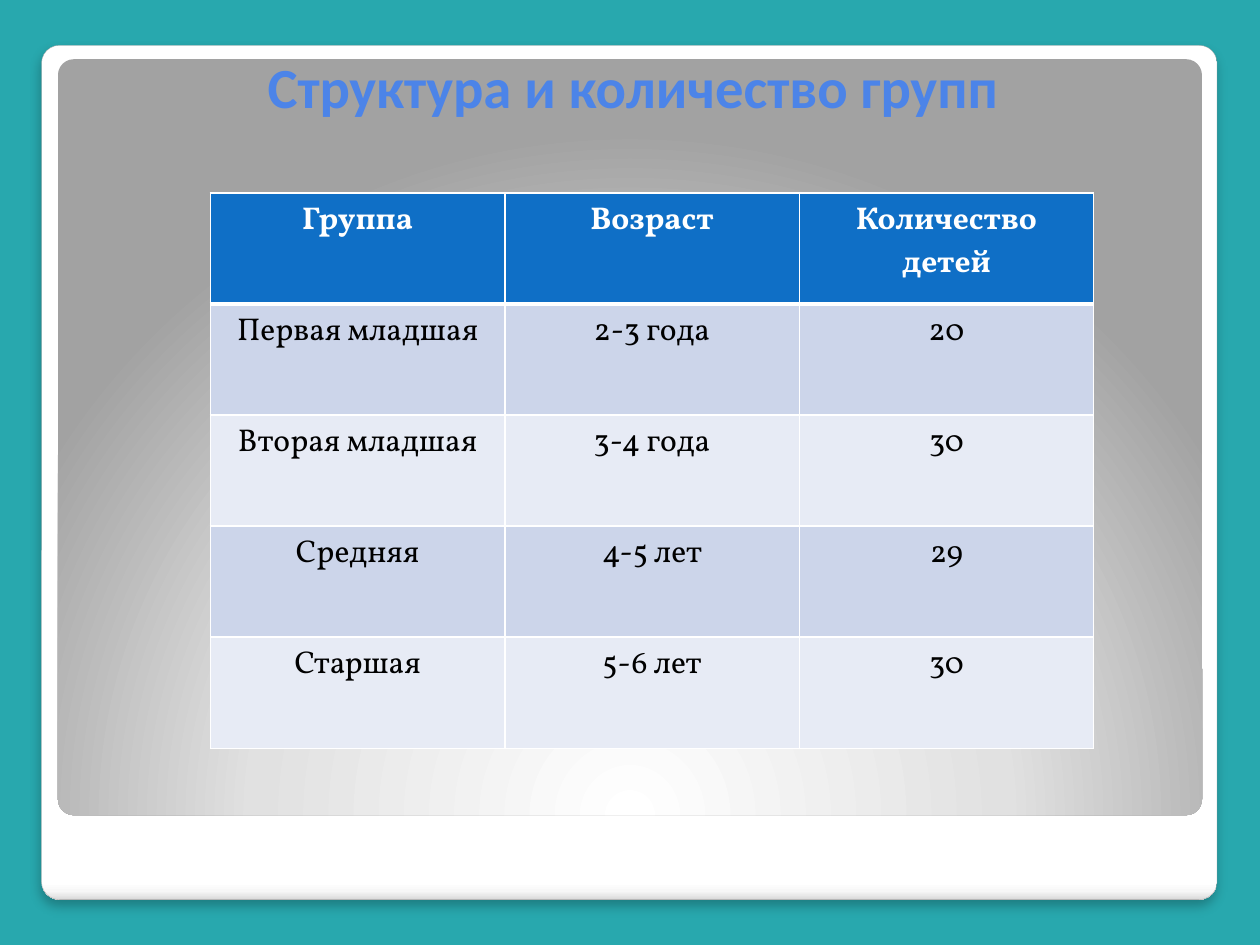
from lxml import etree
from pptx import Presentation
from pptx.dml.color import RGBColor
from pptx.enum.shapes import MSO_SHAPE
from pptx.enum.text import MSO_ANCHOR, PP_ALIGN
from pptx.oxml import parse_xml
from pptx.oxml.ns import nsdecls, qn
from pptx.util import Inches, Pt

GROUPS = [
    ("Группа", "Возраст", "Количество детей"),
    ("Первая младшая", "2-3 года", "20"),
    ("Вторая младшая", "3-4 года", "30"),
    ("Средняя", "4-5 лет", "29"),
    ("Старшая", "5-6 лет", "30"),
]
HEADER_FILL = "0F6FC6"
BAND_FILLS = ("E7EBF5", "CCD5EA")


def color(value):
    return RGBColor.from_string(value)


def set_gradient(shape, stops, direction):
    """Fill a shape with (percent, colour) stops; direction is a lin or path element."""
    shape.fill.background()
    stop_xml = "".join(
        f'<a:gs pos="{percent * 1000}"><a:srgbClr val="{value}"/></a:gs>'
        for percent, value in stops
    )
    gradient = parse_xml(
        f'<a:gradFill {nsdecls("a")} rotWithShape="1">'
        f"<a:gsLst>{stop_xml}</a:gsLst>{direction}</a:gradFill>"
    )
    properties = shape.element.spPr
    properties.replace(properties.find(qn("a:noFill")), gradient)


def add_panel(slide, left, top, width, height, stops, direction):
    panel = slide.shapes.add_shape(
        MSO_SHAPE.ROUNDED_RECTANGLE,
        Inches(left), Inches(top), Inches(width), Inches(height),
    )
    panel.adjustments[0] = 0.021
    panel.shadow.inherit = False
    panel.line.fill.background()
    set_gradient(panel, stops, direction)
    return panel


def add_frame(slide):
    # White card with a soft shadow
    card = add_panel(
        slide, 0.33, 0.36, 9.33, 6.78,
        [(0, "FFFFFF"), (98, "FFFFFF"), (99, "F7F7F7"), (100, "DADADA")],
        '<a:lin ang="5400000" scaled="0"/>',
    )
    card.line.color.rgb = color("A4A4A4")
    card.line.width = Pt(0.16)
    shadow = parse_xml(
        f'<a:outerShdw {nsdecls("a")} blurRad="{Pt(6)}" dist="{Pt(4)}" dir="5400000">'
        '<a:srgbClr val="000000"><a:alpha val="25000"/></a:srgbClr></a:outerShdw>'
    )
    card.element.spPr.find(qn("a:effectLst")).append(shadow)

    # Grey panel lit from below
    add_panel(
        slide, 0.46, 0.47, 9.08, 6,
        [(0, "FFFFFF"), (55, "E1E1E1"), (100, "A2A2A2")],
        '<a:path path="circle">'
        '<a:fillToRect l="50000" t="175000" r="50000" b="-75000"/></a:path>',
    )


def format_title(slide, left, top, width, height):
    title = slide.shapes.title
    title.left, title.top = Inches(left), Inches(top)
    title.width, title.height = Inches(width), Inches(height)
    title.element.getparent().append(title.element)  # in front of the panels
    frame = title.text_frame
    frame.text = "Структура и количество групп"
    frame.vertical_anchor = MSO_ANCHOR.TOP
    frame.margin_top = Inches(0.41)
    paragraph = frame.paragraphs[0]
    paragraph.alignment = PP_ALIGN.CENTER
    paragraph.font.name = "Calibri"
    paragraph.font.size = Pt(32.4)
    paragraph.font.bold = True
    paragraph.font.color.rgb = color("4C84E8")


def set_borders(cell, widths):
    """Give a cell white borders; widths are points for left, right, top, bottom."""
    properties = cell._tc.get_or_add_tcPr()
    for index, (side, width) in enumerate(zip("LRTB", widths)):
        border = etree.Element(qn(f"a:ln{side}"), w=str(Pt(width)))
        fill = etree.SubElement(border, qn("a:solidFill"))
        etree.SubElement(fill, qn("a:srgbClr"), val="FFFFFF")
        properties.insert(index, border)


def add_groups_table(slide, left, top, width, height):
    table = slide.shapes.add_table(
        len(GROUPS), len(GROUPS[0]),
        Inches(left), Inches(top), Inches(width), Inches(height),
    ).table
    for row, values in enumerate(GROUPS):
        is_header = row == 0
        for column, value in enumerate(values):
            cell = table.cell(row, column)
            cell.text = value
            cell.fill.solid()
            cell.fill.fore_color.rgb = color(HEADER_FILL if is_header else BAND_FILLS[row % 2])
            # A thick rule separates the header from the data
            set_borders(cell, (1, 1, 3 if row == 1 else 1, 3 if is_header else 1))
            paragraph = cell.text_frame.paragraphs[0]
            paragraph.alignment = PP_ALIGN.CENTER
            paragraph.font.name = "Vollkorn"
            paragraph.font.size = Pt(18)
            paragraph.font.bold = is_header
            paragraph.font.color.rgb = color("FFFFFF" if is_header else "000000")


def main():
    presentation = Presentation()
    presentation.slide_width, presentation.slide_height = Inches(10), Inches(7.5)
    slide = presentation.slides.add_slide(presentation.slide_layouts[5])
    slide.background.fill.solid()
    slide.background.fill.fore_color.rgb = color("28A8AE")
    add_frame(slide)
    format_title(slide, 0.55, 0, 8.95, 3.12)
    add_groups_table(slide, 1.67, 1.53, 7.01, 4.41)
    presentation.save("out.pptx")


if __name__ == "__main__":
    main()
